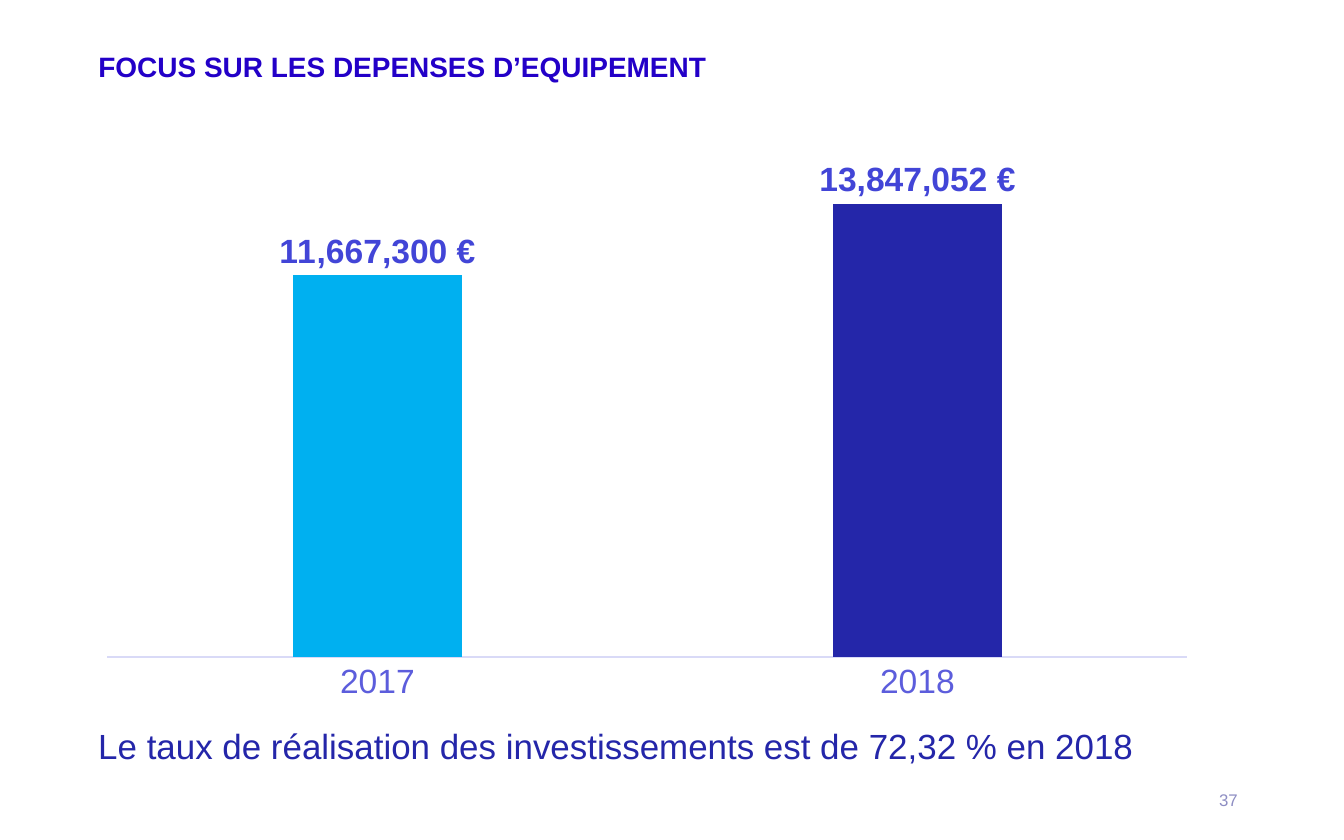
from pptx import Presentation
from pptx import util as u
from pptx.chart import data as chart_data
from pptx.dml import color
from pptx.enum import chart as ch, text

FONT = "Arial"
PX_PER_INCH = 134.4
EURO_FORMAT = '#,##0\\ "€"'


def px(length):
    return u.Emu(round(length * 914400 / PX_PER_INCH))


def rgb(code):
    return color.RGBColor.from_string(code)


def style_font(font, size, code, bold=False):
    font.name = FONT
    font.size = u.Pt(size)
    font.bold = bold
    font.color.rgb = rgb(code)


def write(frame, wording, size, code, bold=False,
          align=text.PP_ALIGN.LEFT, anchor=text.MSO_ANCHOR.TOP):
    frame.word_wrap = True
    frame.auto_size = text.MSO_AUTO_SIZE.NONE
    frame.vertical_anchor = anchor
    paragraph = frame.paragraphs[0]
    paragraph.alignment = align
    run = paragraph.add_run()
    run.text = wording
    style_font(run.font, size, code, bold)


def add_title(slide, wording):
    title = slide.shapes.title
    title.left, title.top, title.width, title.height = map(px, (85, 43, 1145, 153))
    write(title.text_frame, wording, 15, "2300C8", bold=True)


def add_label(slide, box, wording, size, code, **layout):
    label = slide.shapes.add_textbox(*map(px, box))
    write(label.text_frame, wording, size, code, **layout)


def add_spending_chart(slide, spending, bar_colors):
    figures = chart_data.CategoryChartData(number_format=EURO_FORMAT)
    figures.categories = list(spending)
    figures.add_series("Series 1", list(spending.values()))
    chart = slide.shapes.add_chart(
        ch.XL_CHART_TYPE.COLUMN_CLUSTERED, *map(px, (85, 122, 1125, 590)), figures
    ).chart
    chart.has_legend = False
    chart.has_title = False
    style_font(chart.font, 10, "2426A9")

    years = chart.category_axis
    years.major_tick_mark = ch.XL_TICK_MARK.NONE
    style_font(years.tick_labels.font, 18, "5C5DDC")
    years.format.line.color.rgb = rgb("D9DAF7")
    years.format.line.width = u.Pt(0.75)

    amounts = chart.value_axis
    amounts.visible = False
    amounts.has_major_gridlines = False
    amounts.minimum_scale = 0
    amounts.maximum_scale = 16000000

    plot = chart.plots[0]
    plot.gap_width = 219
    plot.overlap = -27
    plot.vary_by_categories = False
    bars = plot.series[0]
    for index, code in enumerate(bar_colors):
        fill = bars.points[index].format.fill
        fill.solid()
        fill.fore_color.rgb = rgb(code)

    labels = bars.data_labels
    labels.show_value = True
    labels.number_format = EURO_FORMAT
    labels.number_format_is_linked = False
    labels.position = ch.XL_LABEL_POSITION.OUTSIDE_END
    style_font(labels.font, 18, "4245D7", bold=True)


def main():
    deck = Presentation()
    deck.slide_width = u.Inches(10)
    deck.slide_height = u.Inches(6.25)
    slide = deck.slides.add_slide(deck.slide_layouts[5])

    add_title(slide, "FOCUS SUR LES DEPENSES D’EQUIPEMENT")
    add_label(slide, (949, 778, 302, 44), "37", 9, "8E8EC3",
              align=text.PP_ALIGN.RIGHT, anchor=text.MSO_ANCHOR.MIDDLE)
    add_spending_chart(slide, {"2017": 11667300, "2018": 13847052},
                       ("00B0F0", "2426A9"))
    add_label(slide, (85, 718, 1125, 56),
              "Le taux de réalisation des investissements est de 72,32 % en 2018",
              18.7, "2426A9")
    deck.save("out.pptx")


if __name__ == "__main__":
    main()
